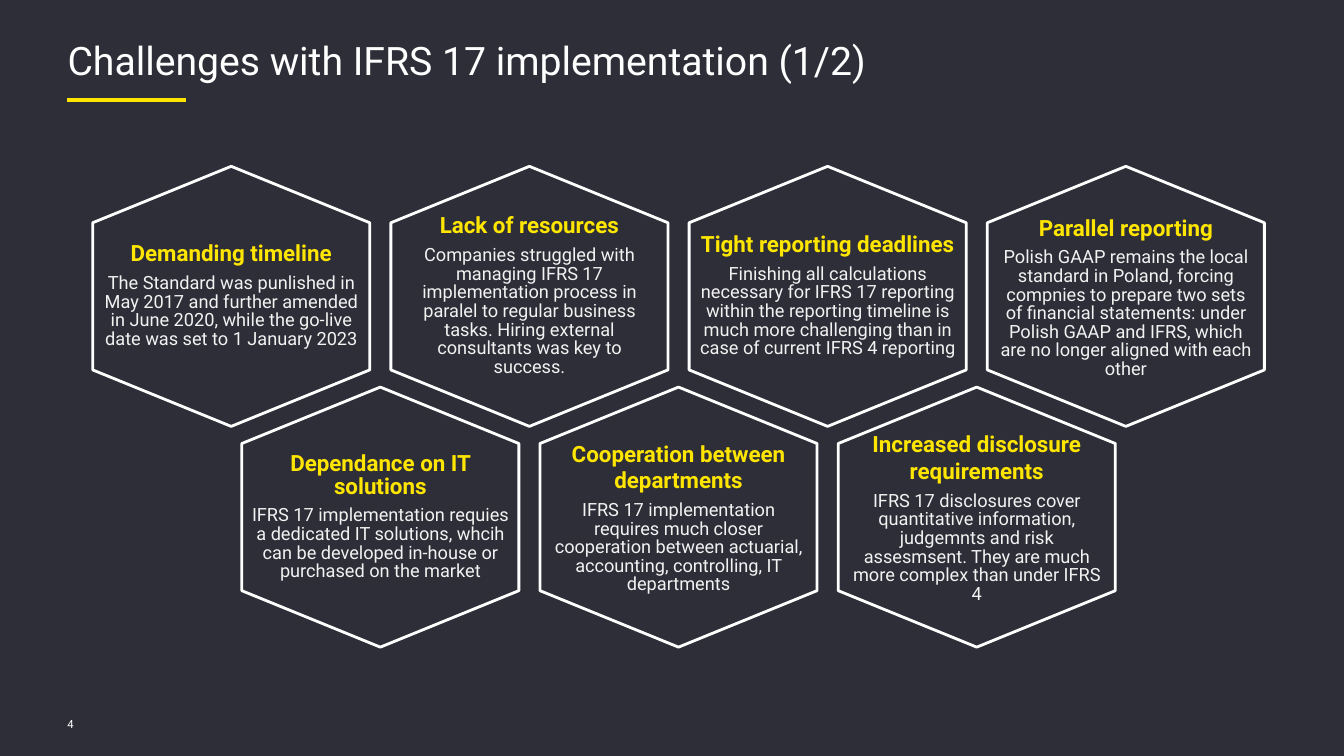
import pptx
import pptx.util
import pptx.dml.color
import pptx.enum.text
import pptx.enum.shapes
from lxml import etree

Inches = pptx.util.Inches
Pt = pptx.util.Pt
Align = pptx.enum.text.PP_ALIGN
Anchor = pptx.enum.text.MSO_ANCHOR

FONT = "Roboto"
YELLOW, WHITE, PALE, DARK = "FFE600", "FFFFFF", "F2F2F2", "2E2E38"
MARGIN = 0.67
HEX_WIDTH, HEX_HEIGHT, SHOULDER = 2.75, 2.58, 0.56
GRID_LEFT, GRID_TOP = 0.92, 1.65
COLUMN_PITCH, ROW_PITCH = 2.96, 2.19
TIGHT = 0.85

ROWS = [
    [
        ("Demanding timeline", TIGHT,
         "The Standard was punlished in May 2017 and further amended in June 2020, "
         "while the go-live date was set to 1 January 2023"),
        ("Lack of resources", TIGHT,
         "Companies struggled with managing IFRS 17 implementation process in paralel "
         "to regular business tasks. Hiring external consultants was key to success."),
        ("Tight reporting deadlines", TIGHT,
         "Finishing all calculations necessary for IFRS 17 reporting within the reporting "
         "timeline is much more challenging than in case of current IFRS 4 reporting"),
        ("Parallel reporting", 1.0,
         "Polish GAAP remains the local standard in Poland, forcing compnies to prepare "
         "two sets of financial statements: under Polish GAAP and IFRS, which are no "
         "longer aligned with each other"),
    ],
    [
        ("Dependance on IT solutions", TIGHT,
         "IFRS 17 implementation requies a dedicated IT solutions, whcih can be "
         "developed in-house or purchased on the market"),
        ("Cooperation between departments", 1.0,
         "IFRS 17 implementation requires much closer cooperation between actuarial, "
         "accounting, controlling, IT departments"),
        ("Increased disclosure requirements", 1.0,
         "IFRS 17 disclosures cover quantitative information, judgemnts and risk "
         "assesmsent. They are much more complex than under IFRS 4"),
    ],
]


def color(value):
    return pptx.dml.color.RGBColor.from_string(value)


def apply(target, values):
    for name, value in values.items():
        setattr(target, name, value)


def set_frame(frame, anchor, side=0):
    apply(frame, {
        "word_wrap": True,
        "auto_size": pptx.enum.text.MSO_AUTO_SIZE.NONE,
        "vertical_anchor": anchor,
        "margin_left": Inches(side), "margin_right": Inches(side),
        "margin_top": 0, "margin_bottom": 0,
    })


def write(para, text, size, fill, bold=False, **layout):
    apply(para, layout)
    span = para.add_run()
    span.text = text
    apply(span.font, {"name": FONT, "size": Pt(size), "bold": bold})
    span.font.color.rgb = color(fill)


def add_header(page, left, top, width, height):
    title = page.shapes.title
    apply(title, {"left": Inches(left), "top": Inches(top),
                  "width": Inches(width), "height": Inches(height)})
    set_frame(title.text_frame, Anchor.TOP)
    write(title.text_frame.paragraphs[0], "Challenges with IFRS 17 implementation (1/2)",
          28, WHITE, alignment=Align.LEFT, line_spacing=TIGHT)
    rule_y = Inches(top + 0.56)
    rule = page.shapes.add_connector(
        pptx.enum.shapes.MSO_CONNECTOR.STRAIGHT,
        Inches(left), rule_y, Inches(left + 1.18), rule_y)
    rule.line.color.rgb = color(YELLOW)
    rule.line.width = Pt(3)
    etree.SubElement(rule._element.spPr, pptx.oxml.ns.qn("a:effectLst"))


def add_hexagon(page, left, top, heading, heading_spacing, body):
    middle, right, bottom = left + HEX_WIDTH / 2, left + HEX_WIDTH, top + HEX_HEIGHT
    upper, lower = top + SHOULDER, bottom - SHOULDER
    corners = [(Inches(x), Inches(y)) for x, y in (
        (middle, top), (right, upper), (right, lower),
        (middle, bottom), (left, lower), (left, upper))]
    outline = page.shapes.build_freeform(*corners[0])
    outline.add_line_segments(corners[1:], close=True)
    hexagon = outline.convert_to_shape()
    hexagon.shadow.inherit = False
    hexagon.fill.background()
    hexagon.line.color.rgb = color(WHITE)
    hexagon.line.width = Pt(2)
    frame = hexagon.text_frame
    set_frame(frame, Anchor.MIDDLE, 0.1)
    layout = {"alignment": Align.CENTER, "space_after": Pt(6)}
    write(frame.paragraphs[0], heading, 16, YELLOW, True,
          line_spacing=heading_spacing, **layout)
    write(frame.add_paragraph(), body, 13, PALE, line_spacing=TIGHT, **layout)


def add_honeycomb(page, left, top):
    for row, cells in enumerate(ROWS):
        for column, cell in enumerate(cells):
            add_hexagon(page, left + (column + row / 2) * COLUMN_PITCH,
                        top + row * ROW_PITCH, *cell)


def add_page_number(page, left, top, width, height):
    box = page.shapes.add_textbox(Inches(left), Inches(top), Inches(width), Inches(height))
    set_frame(box.text_frame, Anchor.MIDDLE)
    write(box.text_frame.paragraphs[0], "4", 8, WHITE)


def main():
    deck = pptx.Presentation()
    apply(deck, {"slide_width": Inches(13.34), "slide_height": Inches(7.5)})
    page = deck.slides.add_slide(deck.slide_layouts.get_by_name("Title Only"))
    page.background.fill.solid()
    page.background.fill.fore_color.rgb = color(DARK)
    add_header(page, MARGIN, 0.43, 12, 0.65)
    add_honeycomb(page, GRID_LEFT, GRID_TOP)
    add_page_number(page, MARGIN, 7.08, 0.73, 0.2)
    deck.save("out.pptx")


if __name__ == "__main__":
    main()
